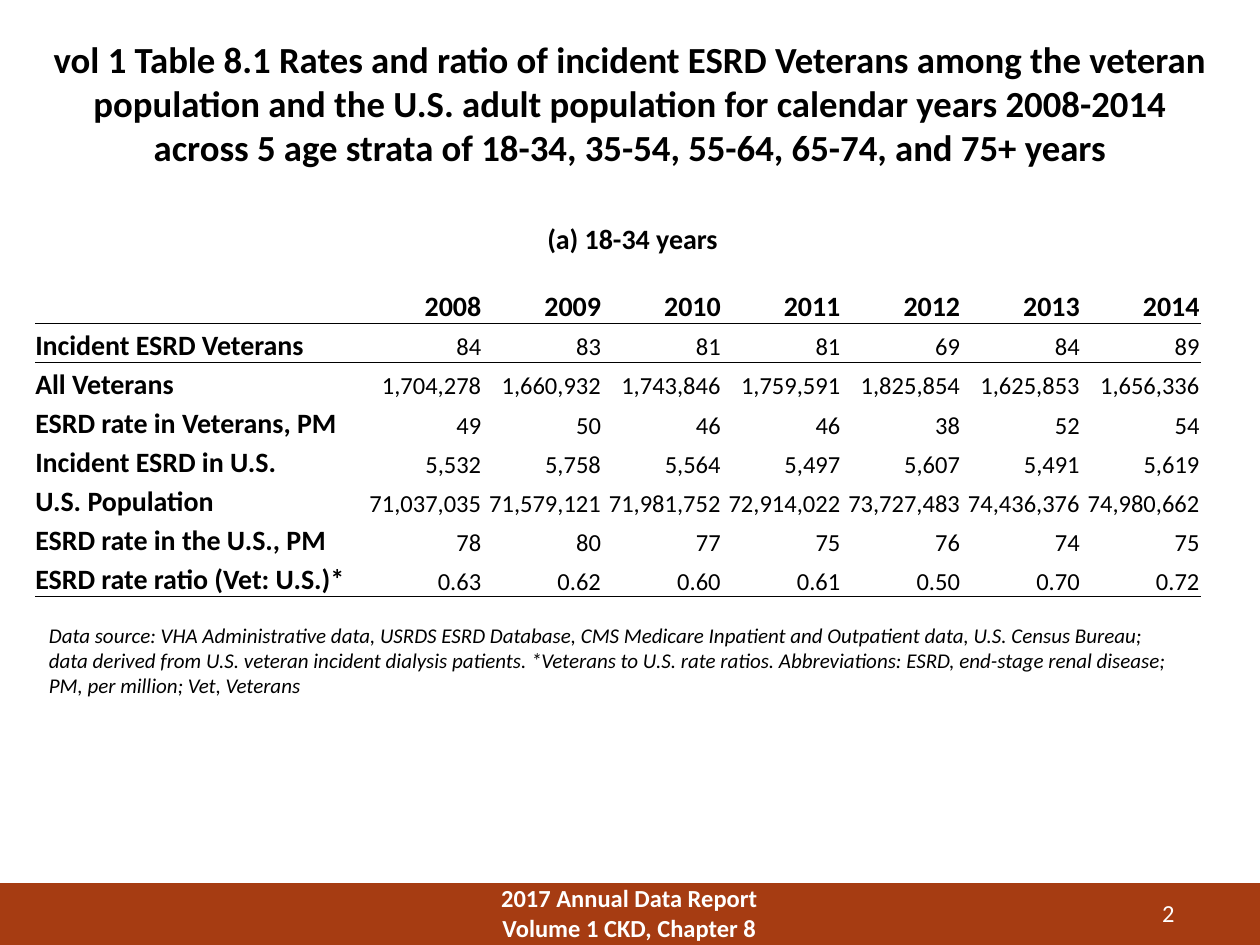
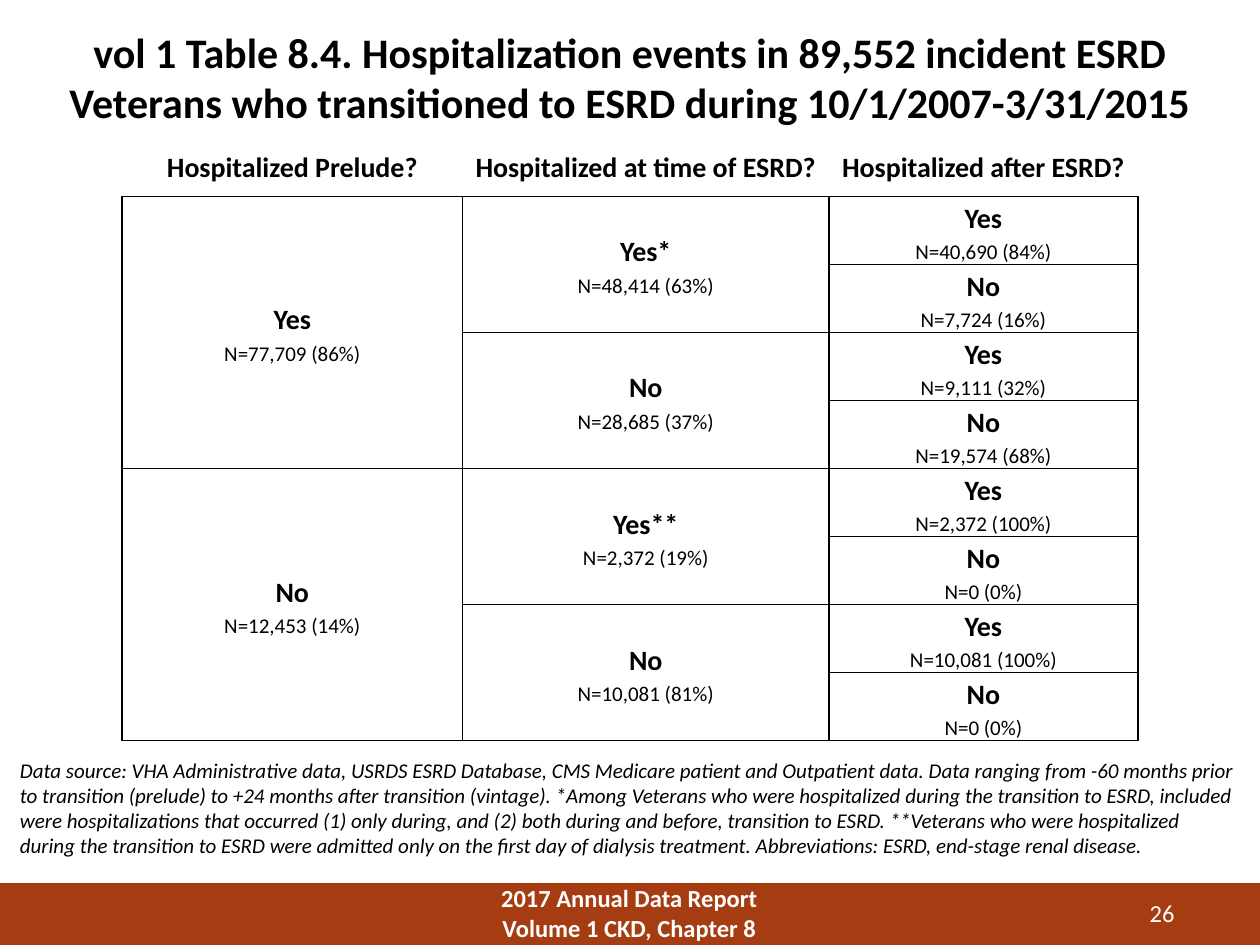
from lxml.etree import SubElement
from pptx import Presentation
from pptx.dml.color import RGBColor
from pptx.enum.shapes import MSO_SHAPE
from pptx.enum.text import MSO_ANCHOR, PP_ALIGN
from pptx.oxml import parse_xml
from pptx.oxml.ns import nsdecls, qn
from pptx.util import Inches, Pt

COLORS = {"rust": "A63C12", "black": "000000", "white": "FFFFFF"}
FONT = "Calibri"
PLAIN_GRID = "{2D5ABB26-0587-4C30-8999-92F81FD0307C}"
SIDES = ("left", "top", "right", "bottom")
LEFT, MID, RIGHT = PP_ALIGN.LEFT, PP_ALIGN.CENTER, PP_ALIGN.RIGHT

HEAD = {"size": Pt(16), "bold": True}
VALUE = {"size": Pt(14)}
COUNT = {"size": Pt(12)}
NOTE = {"size": Pt(12), "italic": True}
FOOT = {"size": Pt(14), "bold": True}

YEARS = [str(year) for year in range(2008, 2015)]
RATES = [
    ("Incident ESRD Veterans", "84 83 81 81 69 84 89"),
    ("All Veterans", "1,704,278 1,660,932 1,743,846 1,759,591 1,825,854 1,625,853 1,656,336"),
    ("ESRD rate in Veterans, PM", "49 50 46 46 38 52 54"),
    ("Incident ESRD in U.S.", "5,532 5,758 5,564 5,497 5,607 5,491 5,619"),
    ("U.S. Population",
     "71,037,035 71,579,121 71,981,752 72,914,022 73,727,483 74,436,376 74,980,662"),
    ("ESRD rate in the U.S., PM", "78 80 77 75 76 74 75"),
    ("ESRD rate ratio (Vet: U.S.)*", "0.63 0.62 0.60 0.61 0.50 0.70 0.72"),
]
STAGES = [
    ("Hospitalized Prelude?", [("Yes", "N=77,709 (86%)"), ("No", "N=12,453 (14%)")]),
    ("Hospitalized at time of ESRD?", [
        ("Yes*", "N=48,414 (63%)"), ("No", "N=28,685 (37%)"),
        ("Yes**", "N=2,372 (19%)"), ("No", "N=10,081 (81%)")]),
    ("Hospitalized after ESRD?", [
        ("Yes", "N=40,690 (84%)"), ("No", "N=7,724 (16%)"),
        ("Yes", "N=9,111 (32%)"), ("No", "N=19,574 (68%)"),
        ("Yes", "N=2,372 (100%)"), ("No", "N=0 (0%)"),
        ("Yes", "N=10,081 (100%)"), ("No", "N=0 (0%)")]),
]


class Deck:
    def __init__(self):
        self.show = Presentation()
        self.show.slide_width, self.show.slide_height = Inches(10), Inches(7.5)
        self.slide = None

    def start(self, page):
        """Add a slide with its footer band and page number."""
        self.slide = self.show.slides.add_slide(self.show.slide_layouts[6])
        band = self.slide.shapes.add_shape(
            MSO_SHAPE.RECTANGLE, *map(Inches, (0, 7.01, 10, 0.49)))
        band.shadow.inherit = False
        band.fill.solid()
        band.fill.fore_color.rgb = RGBColor.from_string(COLORS["rust"])
        band.line.fill.background()
        self.text((3.58, 6.96, 2.83, 0.54),
                  [("2017 Annual Data Report", FOOT), ("Volume 1 CKD, Chapter 8", FOOT)],
                  MID, "white")
        self.text((8.42, 7.08, 1, 0.3), [(page, VALUE)], RIGHT, "white")

    def fill(self, frame, lines, align, color="black", space=None):
        """Put styled lines into a text frame, one paragraph each."""
        for num, (words, style) in enumerate(lines):
            para = frame.paragraphs[0] if num == 0 else frame.add_paragraph()
            para.alignment, para.line_spacing = align, space
            run = para.add_run()
            run.text = words
            for name, value in {"name": FONT, **style}.items():
                setattr(run.font, name, value)
            run.font.color.rgb = RGBColor.from_string(COLORS[color])

    def text(self, place, lines, align=LEFT, color="black", wrap=True):
        frame = self.slide.shapes.add_textbox(*map(Inches, place)).text_frame
        frame.word_wrap = wrap
        self.fill(frame, lines, align, color)
        return frame

    def title(self, place, words, size):
        frame = self.text(place, [(words, {"size": Pt(size), "bold": True})], MID)
        frame.margin_top = Inches(0.07)

    def table(self, left, top, widths, heights):
        size = sum(widths), sum(heights)
        frame = self.slide.shapes.add_table(
            len(heights), len(widths), *map(Inches, (left, top, *size)))
        grid = frame.table
        grid.first_row = grid.horz_banding = False
        frame._element.find(".//" + qn("a:tableStyleId")).text = PLAIN_GRID
        for col, width in zip(grid.columns, widths):
            col.width = Inches(width)
        for row, height in zip(grid.rows, heights):
            row.height = Inches(height)
        for cell in grid.iter_cells():
            cell.fill.background()
        return grid

    def cell(self, cell, lines, align, inset, anchor=MSO_ANCHOR.MIDDLE):
        for side, gap in zip(SIDES, inset):
            setattr(cell, "margin_" + side, Inches(gap))
        cell.vertical_anchor = anchor
        self.fill(cell.text_frame, lines, align, space=1.15)

    def border(self, cell, edges):
        """Rule the named edges (out of L, R, T, B) of a cell."""
        props = cell._tc.get_or_add_tcPr()
        for spot, edge in enumerate(edges):
            line = parse_xml(f'<a:ln{edge} {nsdecls("a")} w="12700"/>')
            fill = SubElement(line, qn("a:solidFill"))
            SubElement(fill, qn("a:srgbClr"), val=COLORS["black"])
            props.insert(spot, line)


def draw_rates(deck):
    deck.start("2")
    deck.title((0.29, 0.22, 9.42, 1.24),
               "vol 1 Table 8.1 Rates and ratio of incident ESRD Veterans among the veteran "
               "population and the U.S. adult population for calendar years 2008-2014 across "
               "5 age strata of 18-34, 35-54, 55-64, 65-74, and 75+ years", 21)
    deck.text((4.23, 1.71, 1.58, 0.37), [("(a) 18-34 years", HEAD)], MID, wrap=False)
    rows = [("", YEARS)] + [(label, nums.split()) for label, nums in RATES]
    grid = deck.table(0.28, 2.25, [2.52, 1.03] + [0.95] * 6, [0.31] * len(rows))
    inset = (0.01, 0.01, 0.01, 0)
    for r, (label, nums) in enumerate(rows):
        deck.cell(grid.cell(r, 0), [(label, HEAD)], LEFT, (0, 0, 0, 0))
        style, anchor = (VALUE, MSO_ANCHOR.BOTTOM) if r else (HEAD, MSO_ANCHOR.MIDDLE)
        for c, num in enumerate(nums, 1):
            deck.cell(grid.cell(r, c), [(num, style)], RIGHT, inset, anchor)
    for r, edge in ((0, "B"), (1, "T"), (len(rows) - 1, "B")):
        for cell in grid.rows[r].cells:
            deck.border(cell, edge)
    deck.text((0.29, 4.89, 9.2, 0.71), [(
        "Data source: VHA Administrative data, USRDS ESRD Database, CMS Medicare Inpatient and "
        "Outpatient data, U.S. Census Bureau; data derived from U.S. veteran incident dialysis "
        "patients. *Veterans to U.S. rate ratios. Abbreviations: ESRD, end-stage renal disease; "
        "PM, per million; Vet, Veterans", NOTE)])


def draw_stays(deck):
    deck.start("26")
    deck.title((0, 0.14, 10, 0.91),
               "vol 1 Table 8.4. Hospitalization events in 89,552 incident ESRD Veterans who "
               "transitioned to ESRD during 10/1/2007-3/31/2015", 24)
    depth = len(STAGES[-1][1])
    grid = deck.table(0.97, 1.06, [2.7, 2.91, 2.45], [0.5] + [0.54] * depth)
    inset = (0.07, 0, 0.07, 0)
    for c, (head, groups) in enumerate(STAGES):
        deck.cell(grid.cell(0, c), [(head, HEAD)], MID, inset)
        span = depth // len(groups)
        for num, (answer, count) in enumerate(groups):
            first = 1 + num * span
            cell = grid.cell(first, c)
            if span > 1:
                cell.merge(grid.cell(first + span - 1, c))
            deck.cell(cell, [(answer, HEAD), (count, COUNT)], MID, inset)
        deck.border(grid.cell(0, c), "B")
        for r in range(1, depth + 1):
            deck.border(grid.cell(r, c), "LRTB")
    deck.text((0.06, 5.96, 9.88, 0.91), [(
        "Data source: VHA Administrative data, USRDS ESRD Database, CMS Medicare patient and "
        "Outpatient data. Data ranging from -60 months prior to transition (prelude) to +24 "
        "months after transition (vintage). *Among Veterans who were hospitalized during the "
        "transition to ESRD, included were hospitalizations that occurred (1) only during, and "
        "(2) both during and before, transition to ESRD. **Veterans who were hospitalized "
        "during the transition to ESRD were admitted only on the first day of dialysis "
        "treatment. Abbreviations: ESRD, end-stage renal disease.", NOTE)])


def main():
    deck = Deck()
    draw_rates(deck)
    draw_stays(deck)
    deck.show.save("out.pptx")


if __name__ == "__main__":
    main()
